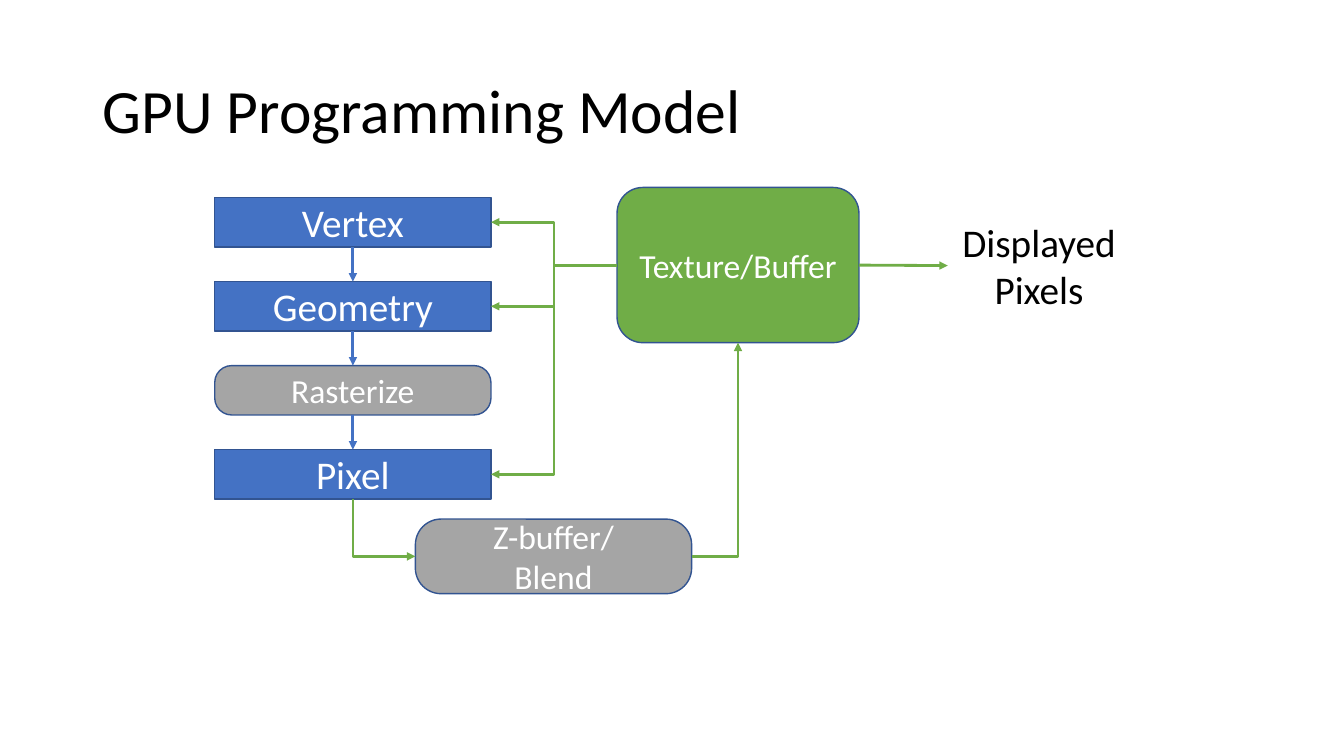
from dataclasses import dataclass

from lxml.etree import SubElement
from pptx import Presentation
from pptx.dml.color import RGBColor
from pptx.enum.shapes import MSO_CONNECTOR, MSO_SHAPE
from pptx.enum.text import MSO_ANCHOR, PP_ALIGN
from pptx.oxml.ns import qn
from pptx.util import Inches, Pt


@dataclass(frozen=True)
class Theme:
    font: str = "Calibri"
    blue: str = "4472C4"
    green: str = "70AD47"
    gray: str = "A5A5A5"
    edge: str = "325491"
    white: str = "FFFFFF"
    black: str = "000000"
    title: int = 44
    large: int = 28
    small: int = 24


THEME = Theme()
TOP, LEFT, BOTTOM, RIGHT = range(4)  # connection sites of a box
ROUND = 0.344


def color(code):
    return RGBColor.from_string(code)


def write(shape, text, size, ink, align=PP_ALIGN.CENTER):
    frame = shape.text_frame
    frame.word_wrap = True
    frame.vertical_anchor = MSO_ANCHOR.MIDDLE
    frame.text = text
    for para in frame.paragraphs:
        para.alignment = align
        for run in para.runs:
            run.font.name = THEME.font
            run.font.size = Pt(size)
            run.font.color.rgb = color(ink)


def add_box(slide, box, text, fill, size, form=MSO_SHAPE.RECTANGLE, curve=None):
    shape = slide.shapes.add_shape(form, *map(Inches, box))
    shape.shadow.inherit = False
    shape.fill.solid()
    shape.fill.fore_color.rgb = color(fill)
    shape.line.color.rgb = color(THEME.edge)
    shape.line.width = Pt(1)
    if curve is not None:
        shape.adjustments[0] = curve
    write(shape, text, size, THEME.white)
    return shape


def link(slide, start, out, end, into, ink, kind=MSO_CONNECTOR.STRAIGHT):
    """Join two boxes with an arrow, from site out to site into."""
    line = slide.shapes.add_connector(kind, 0, 0, 0, 0)
    line.begin_connect(start, out)
    line.end_connect(end, into)
    line.line.color.rgb = color(ink)
    line.line.width = Pt(2)
    props = line._element.spPr
    SubElement(props.find(qn("a:ln")), qn("a:tailEnd"), type="triangle")
    SubElement(props, qn("a:effectLst"))
    return line


def add_bend(slide, start, out, end, into):
    """Join two boxes with an arrow that turns one corner."""
    line = link(slide, start, out, end, into, THEME.green, MSO_CONNECTOR.ELBOW)
    props = line._element.spPr
    props.find(qn("a:prstGeom")).set("prst", "bentConnector2")
    if out == BOTTOM:  # leave downwards: turn the path about its centre
        wide, high = line.width, line.height
        shift = (wide - high) // 2
        line.left, line.top = line.left + shift, line.top - shift
        line.width, line.height = high, wide
        frame = props.find(qn("a:xfrm"))
        frame.set("rot", "16200000")
        frame.set("flipH", "1")


def add_title(slide, box, text):
    title = slide.shapes.title
    title.left, title.top, title.width, title.height = map(Inches, box)
    write(title, text, THEME.title, THEME.black, PP_ALIGN.LEFT)
    title.text_frame.paragraphs[0].line_spacing = 0.9


def add_stages(slide, box):
    """Stack the pipeline stages evenly, joined by arrows."""
    left, top, width, height = box
    names = ["Vertex", "Geometry", "Rasterize", "Pixel"]
    tall = 0.49
    step = (height - tall) / (len(names) - 1)
    stages = {}
    last = None
    for row, name in enumerate(names):
        place = (left, top + row * step, width, tall)
        if name == "Rasterize":
            stage = add_box(slide, place, name, THEME.gray, THEME.small,
                            MSO_SHAPE.ROUNDED_RECTANGLE, ROUND)
        else:
            stage = add_box(slide, place, name, THEME.blue, THEME.large)
        if last is not None:
            link(slide, last, BOTTOM, stage, TOP, THEME.blue)
        stages[name] = stage
        last = stage
    return stages


def add_memory(slide, box, stages):
    """Place the buffer, blend step and display, and join them to the stages."""
    left, top, width, height = box
    buffer = add_box(slide, (left + 2, top, 2.4, 1.54), "Texture/Buffer",
                     THEME.green, THEME.small, MSO_SHAPE.ROUNDED_RECTANGLE)
    blend = add_box(slide, (left, top + height - 0.74, 2.74, 0.74), "Z-buffer/\vBlend",
                    THEME.gray, THEME.small, MSO_SHAPE.ROUNDED_RECTANGLE, ROUND)
    screen = slide.shapes.add_textbox(
        *map(Inches, (left + width - 1.81, top + 0.32, 1.81, 0.91)))
    write(screen, "Displayed\vPixels", THEME.large, THEME.black)

    # Data flow
    for name in ("Vertex", "Geometry", "Pixel"):
        link(slide, buffer, LEFT, stages[name], RIGHT, THEME.green, MSO_CONNECTOR.ELBOW)
    link(slide, buffer, RIGHT, screen, LEFT, THEME.green)
    add_bend(slide, stages["Pixel"], BOTTOM, blend, LEFT)
    add_bend(slide, blend, RIGHT, buffer, BOTTOM)


def main():
    deck = Presentation()
    deck.slide_width, deck.slide_height = Inches(13.33), Inches(7.5)
    slide = deck.slides.add_slide(deck.slide_layouts[5])
    add_title(slide, (0.92, 0.4, 11.5, 1.45), "GPU Programming Model")
    stages = add_stages(slide, (2.13, 1.96, 2.74, 2.99))
    add_memory(slide, (4.12, 1.86, 7.09, 4.03), stages)
    deck.save("out.pptx")


if __name__ == "__main__":
    main()
